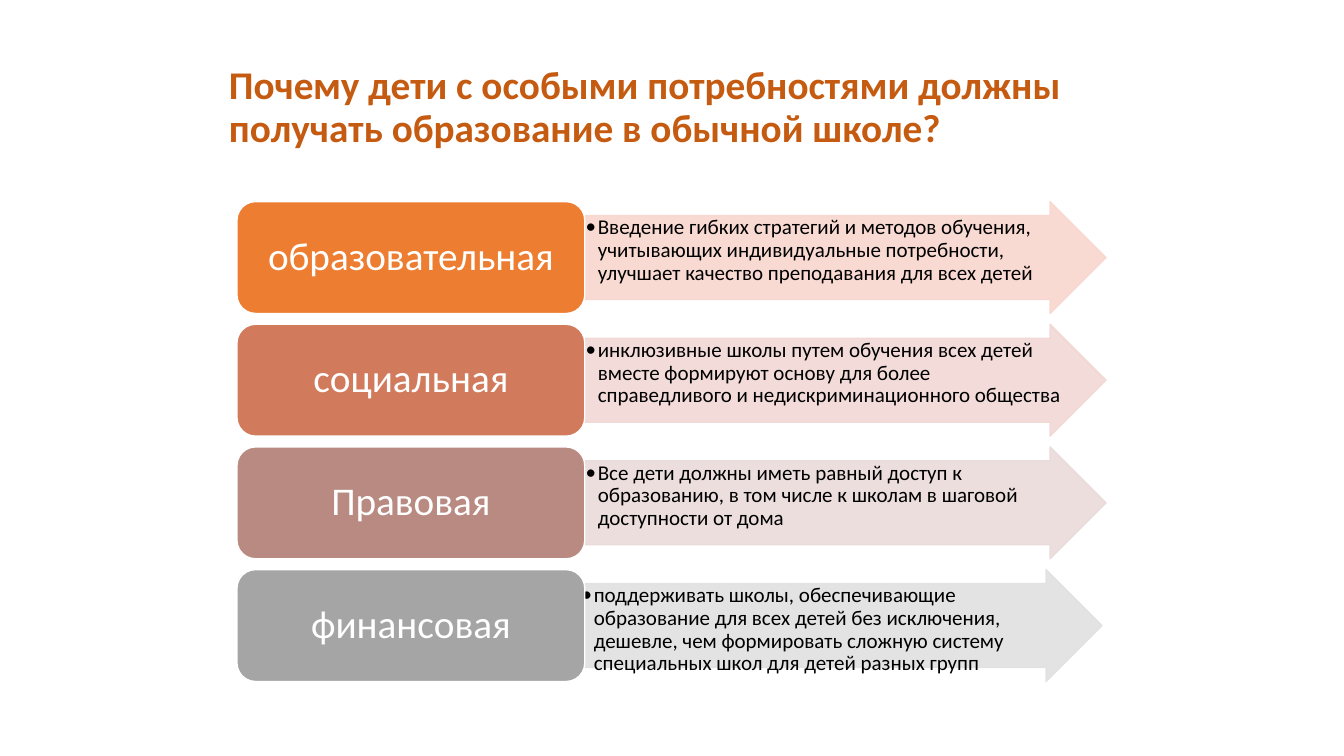
from dataclasses import dataclass

from lxml.etree import SubElement
from pptx import Presentation
from pptx.dml.color import RGBColor
from pptx.enum.shapes import MSO_SHAPE
from pptx.enum.text import MSO_ANCHOR, MSO_AUTO_SIZE, PP_ALIGN
from pptx.oxml.ns import qn
from pptx.util import Inches, Pt

TITLE = "Почему дети с особыми потребностями должны получать образование в обычной школе?"

# label, reason, label colour, arrow colour, arrow shift in inches
REASONS = [
    ("образовательная",
     "Введение гибких стратегий и методов обучения, учитывающих индивидуальные "
     "потребности, улучшает качество преподавания для всех детей",
     "ED7D31", "F8D7CE", 0),
    ("социальная",
     "инклюзивные школы путем обучения всех детей вместе формируют основу для более "
     "справедливого и недискриминационного общества",
     "D17B5C", "F1D8D4", 0),
    ("Правовая",
     "Все дети должны иметь равный доступ к образованию, в том числе к школам "
     "в шаговой доступности от дома",
     "B98A82", "E9DBDA", 0),
    ("финансовая",
     "поддерживать школы, обеспечивающие образование для всех детей без исключения, "
     "дешевле, чем формировать сложную систему специальных школ для детей разных групп",
     "A5A5A5", "E1E1E1", -0.04),
]


@dataclass(frozen=True)
class Theme:
    font: str = "Calibri"
    title_color: str = "C55A11"
    label_color: str = "FFFFFF"
    reason_color: str = "000000"
    outline: str = "FFFFFF"
    heading_size: int = 28
    reason_size: int = 15
    arrow_opacity: int = 90


THEME = Theme()

# Grid, in inches
TITLE_BOX = (2.17, 0.6, 9, 0.95)
LEFT, TOP = 2.35, 2
LABEL_WIDTH, ARROW_WIDTH = 3.45, 5.17
ROW_HEIGHT, ROW_STEP = 1.11, 1.217


def write(shape, text, size, color, anchor, align, bold=False):
    frame = shape.text_frame
    frame.text = text
    frame.word_wrap = True
    frame.auto_size = MSO_AUTO_SIZE.NONE
    frame.vertical_anchor = anchor
    para = frame.paragraphs[0]
    para.alignment = align
    para.line_spacing = 0.9
    font = para.runs[0].font
    font.name, font.size, font.bold = THEME.font, Pt(size), bold
    font.color.rgb = RGBColor.from_string(color)


def set_margins(shape, across, down):
    frame = shape.text_frame
    frame.margin_left = frame.margin_right = Inches(across)
    frame.margin_top = frame.margin_bottom = Inches(down)


def add_block(page, kind, box, fill, outline):
    shape = page.shapes.add_shape(kind, *map(Inches, box))
    shape.shadow.inherit = False
    shape.fill.solid()
    shape.fill.fore_color.rgb = RGBColor.from_string(fill)
    shape.line.color.rgb = RGBColor.from_string(outline)
    shape.line.width = Pt(1)
    return shape


def set_opacity(shape, percent):
    for color in shape._element.spPr.iter(qn("a:srgbClr")):
        SubElement(color, qn("a:alpha")).set("val", str(percent * 1000))


def add_bullet(para, indent):
    properties = para._p.get_or_add_pPr()
    properties.set("marL", str(Inches(indent)))
    properties.set("indent", str(-Inches(indent)))
    SubElement(properties, qn("a:buFont")).set("typeface", THEME.font)
    SubElement(properties, qn("a:buChar")).set("char", "•")


def add_reason(page, row, label, reason, label_fill, arrow_fill, shift):
    top = TOP + row * ROW_STEP
    arrow = add_block(page, MSO_SHAPE.RIGHT_ARROW,
                      (LEFT + LABEL_WIDTH + shift, top, ARROW_WIDTH, ROW_HEIGHT),
                      arrow_fill, arrow_fill)
    arrow.adjustments[0], arrow.adjustments[1] = 0.75, 0.5
    set_opacity(arrow, THEME.arrow_opacity)
    write(arrow, reason, THEME.reason_size, THEME.reason_color,
          MSO_ANCHOR.TOP, PP_ALIGN.LEFT)
    set_margins(arrow, 0.01, 0.01)
    add_bullet(arrow.text_frame.paragraphs[0], 0.12)

    box = add_block(page, MSO_SHAPE.ROUNDED_RECTANGLE,
                    (LEFT, top, LABEL_WIDTH, ROW_HEIGHT), label_fill, THEME.outline)
    write(box, label, THEME.heading_size, THEME.label_color,
          MSO_ANCHOR.MIDDLE, PP_ALIGN.CENTER)
    set_margins(box, 0.12, 0.06)


def main():
    deck = Presentation()
    deck.slide_width, deck.slide_height = Inches(13.33), Inches(7.5)
    page = deck.slides.add_slide(deck.slide_layouts.get_by_name("Title Only"))

    title = page.shapes.title
    title.left, title.top, title.width, title.height = map(Inches, TITLE_BOX)
    write(title, TITLE, THEME.heading_size, THEME.title_color,
          MSO_ANCHOR.MIDDLE, PP_ALIGN.LEFT, bold=True)

    for row, reason in enumerate(REASONS):
        add_reason(page, row, *reason)
    deck.save("out.pptx")


if __name__ == "__main__":
    main()
